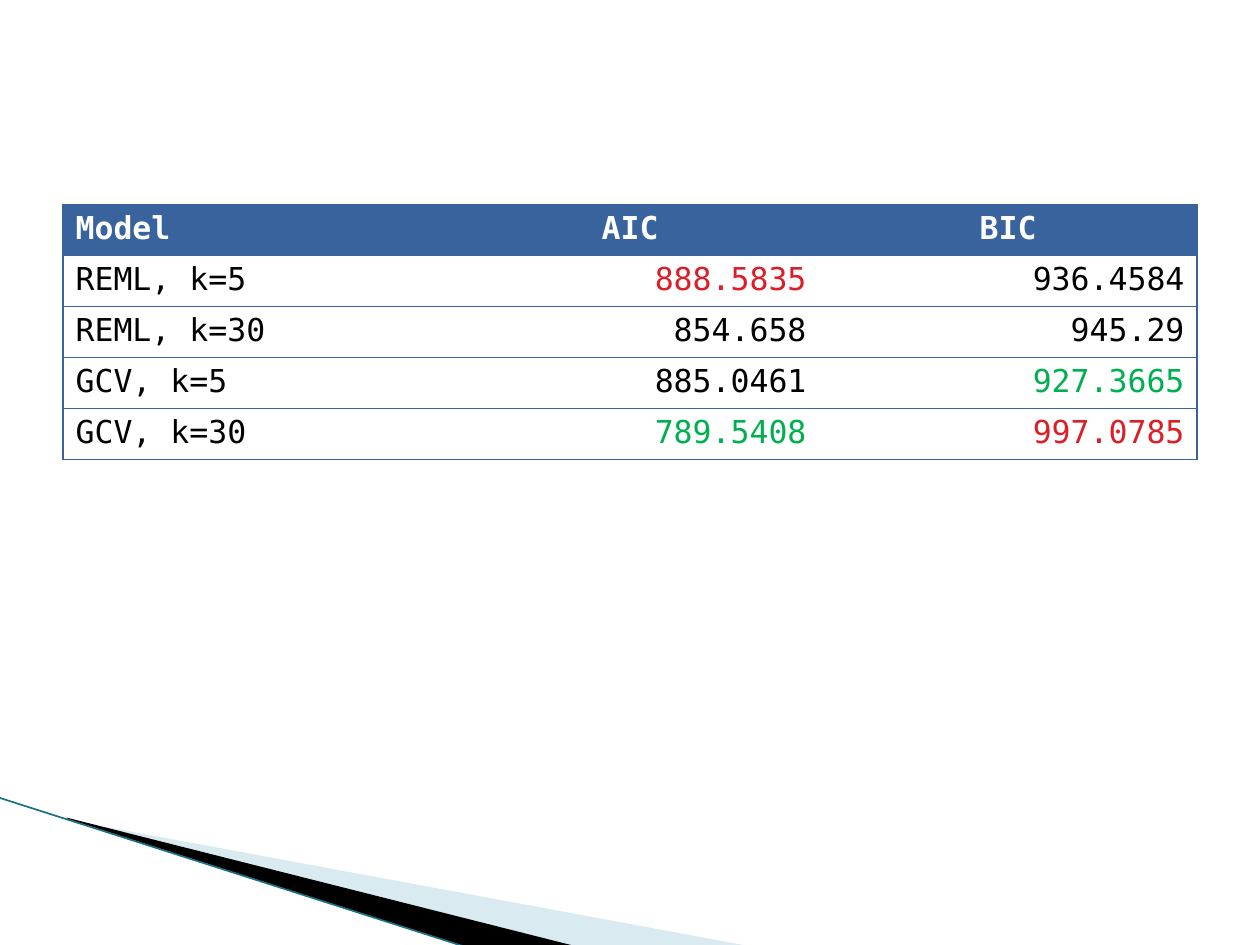
from dataclasses import dataclass

from lxml import etree
from pptx import Presentation, util as u
from pptx.dml.color import RGBColor
from pptx.enum import shapes, text
from pptx.oxml.ns import qn


@dataclass(frozen=True)
class Theme:
    font: str = "DejaVu Sans Mono"
    size: float = 18
    border: float = 0.75
    edge: float = 0.95
    blue: str = "39639D"
    white: str = "FFFFFF"
    black: str = "000000"
    worst: str = "DA1F28"
    best: str = "00B050"
    pale: str = "A0CBDC"
    teal: str = "1B7085"


@dataclass(frozen=True)
class Score:
    value: str
    color: str


@dataclass(frozen=True)
class Model:
    name: str
    aic: Score
    bic: Score


@dataclass(frozen=True)
class Wedge:
    """Frame and outline in percent of the slide; the outline may leave the frame."""
    frame: tuple[float, float, float, float]
    points: tuple[tuple[float, float], ...]
    color: str
    opacity: int


T = Theme()
W, H = u.Inches(10), u.Inches(7.5)
HEADERS = ("Model", "AIC", "BIC")
MODELS = (
    Model("REML, k=5", Score("888.5835", T.worst), Score("936.4584", T.black)),
    Model("REML, k=30", Score("854.658", T.black), Score("945.29", T.black)),
    Model("GCV, k=5", Score("885.0461", T.black), Score("927.3665", T.best)),
    Model("GCV, k=30", Score("789.5408", T.best), Score("997.0785", T.worst)),
)
WEDGES = (
    Wedge((7.8, 72.93, 41.6, 21.07),
          ((5.5, 86.8), (59.5, 100.13), (45.6, 100.13), (5.5, 86.67)), T.pale, 40),
    Wedge((-0.6, 84.4, 41.6, 12.27),
          ((5.3, 86.53), (45.7, 100.13), (37.2, 100.27), (5.4, 86.67)), T.black, 100),
)


def rgb(color: str) -> RGBColor:
    return RGBColor.from_string(color)


def across(percent: float) -> int:
    return round(percent * W / 100)


def down(percent: float) -> int:
    return round(percent * H / 100)


def set_frame(sp, frame: tuple[float, float, float, float]) -> None:
    """Change the frame while the outline keeps its place on the slide."""
    x, y, w, h = frame
    dx, dy = sp.left - across(x), sp.top - down(y)
    sp.left, sp.top, sp.width, sp.height = across(x), down(y), across(w), down(h)
    for outline in sp._element.iter(qn("a:path")):
        outline.set("w", str(sp.width))
        outline.set("h", str(sp.height))
        for pt in outline.iter(qn("a:pt")):
            pt.set("x", str(int(pt.get("x")) + dx))
            pt.set("y", str(int(pt.get("y")) + dy))


def draw_wedge(s, wedge: Wedge) -> None:
    points = [(across(x), down(y)) for x, y in wedge.points]
    builder = s.shapes.build_freeform(*points[0])
    builder.add_line_segments(points[1:], close=True)
    sp = builder.convert_to_shape()
    set_frame(sp, wedge.frame)
    sp.shadow.inherit = False
    sp.line.fill.background()
    sp.fill.solid()
    sp.fill.fore_color.rgb = rgb(wedge.color)
    if wedge.opacity < 100:
        color = sp.fill._xPr.find(qn("a:solidFill"))[0]
        etree.SubElement(color, qn("a:alpha"), val=str(wedge.opacity * 1000))


def draw_edge(s) -> None:
    line = s.shapes.add_connector(
        shapes.MSO_CONNECTOR.STRAIGHT,
        across(-0.1), down(84.4), across(37.1), down(100.27))
    line.line.color.rgb = rgb(T.teal)
    line.line.width = u.Pt(T.edge)
    etree.SubElement(line._element.spPr, qn("a:effectLst"))


def set_borders(cell, visible: str) -> None:
    """Draw the named sides (L, R, T, B) and hide the others."""
    tcPr = cell._tc.get_or_add_tcPr()
    for side in "LRTB":
        ln = etree.SubElement(tcPr, qn(f"a:ln{side}"), w=str(u.Pt(T.border)))
        if side in visible:
            fill = etree.SubElement(ln, qn("a:solidFill"))
            etree.SubElement(fill, qn("a:srgbClr"), val=T.blue)
        else:
            etree.SubElement(ln, qn("a:noFill"))


def write_cell(cell, content: Score, align, header: bool, sides: str) -> None:
    set_borders(cell, sides)
    if header:
        cell.fill.solid()
        cell.fill.fore_color.rgb = rgb(T.blue)
    else:
        cell.fill.background()
    p = cell.text_frame.paragraphs[0]
    p.text = content.value
    p.alignment = align
    p.font.name = T.font
    p.font.size = u.Pt(T.size)
    p.font.bold = header
    p.font.color.rgb = rgb(content.color)


def draw_table(s) -> None:
    rows = [[Score(h, T.white) for h in HEADERS]]
    rows += [[Score(m.name, T.black), m.aic, m.bic] for m in MODELS]
    last = len(HEADERS) - 1
    table = s.shapes.add_table(
        len(rows), len(HEADERS),
        across(5), down(21.6), across(90), down(27)).table
    table.horz_banding = False
    for i, row in enumerate(rows):
        for j, content in enumerate(row):
            if j == 0:
                align = text.PP_ALIGN.LEFT
            else:
                align = text.PP_ALIGN.RIGHT if i else text.PP_ALIGN.CENTER
            sides = "TB" + ("L" if j == 0 else "") + ("R" if j == last else "")
            write_cell(table.cell(i, j), content, align, i == 0, sides)


def main() -> None:
    prs = Presentation()
    prs.slide_width, prs.slide_height = W, H
    s = prs.slides.add_slide(prs.slide_layouts[6])

    # Corner decoration
    for wedge in WEDGES:
        draw_wedge(s, wedge)
    draw_edge(s)

    # Model comparison
    draw_table(s)
    prs.save("out.pptx")


if __name__ == "__main__":
    main()
